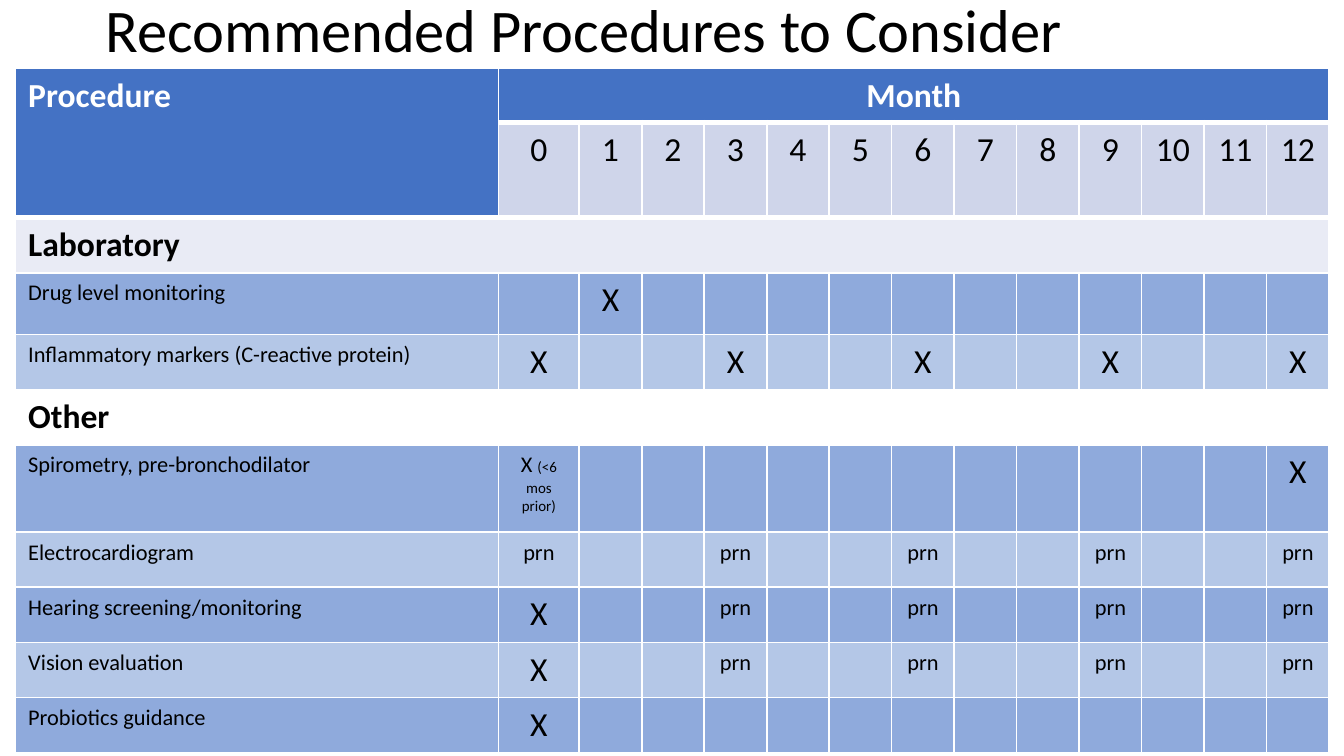
from lxml import etree
from pptx import Presentation
from pptx.dml.color import RGBColor
from pptx.enum.text import MSO_ANCHOR, PP_ALIGN
from pptx.util import Inches, Pt

CENTER, LEFT, MIDDLE = PP_ALIGN.CENTER, PP_ALIGN.LEFT, MSO_ANCHOR.MIDDLE
FONT = "Calibri"
BLACK, WHITE = "000000", "FFFFFF"
HEADER, MONTH_FILL = "4472C4", "CFD5EA"
DARK, LIGHT = "8FAADC", "B4C7E7"
SIZES = {"X": 18, "prn": 12}

# Content: visits map a month to its mark
TITLE = "Recommended Procedures to Consider"
MONTHS = range(13)
QUARTERLY = (3, 6, 9, 12)
PRN = dict.fromkeys(QUARTERLY, "prn")
NOTE = "(<6 mos prior)"

# label, fill, row height, visits (None for a section heading)
ROWS = [
    ("Laboratory", "E9EBF5", 0.41, None),
    ("Drug level monitoring", DARK, 0.46, {1: "X"}),
    ("Inflammatory markers (C-reactive protein)", LIGHT, 0.41,
     dict.fromkeys((0, *QUARTERLY), "X")),
    ("Other", WHITE, 0.41, None),
    ("Spirometry, pre-bronchodilator", DARK, 0.65, {0: NOTE, 12: "X"}),
    ("Electrocardiogram", LIGHT, 0.41, {0: "prn", **PRN}),
    ("Hearing screening/monitoring", DARK, 0.41, {0: "X", **PRN}),
    ("Vision evaluation", LIGHT, 0.41, {0: "X", **PRN}),
    ("Probiotics guidance", DARK, 0.41, {0: "X"}),
]
HEADER_HEIGHTS = [0.4, 0.71]
TABLE_WIDTH, LABEL_WIDTH, BASELINE_WIDTH = 9.78, 3.6, 0.6
MONTH_WIDTH = (TABLE_WIDTH - LABEL_WIDTH - BASELINE_WIDTH) / 12
COL_WIDTHS = [LABEL_WIDTH, BASELINE_WIDTH] + [MONTH_WIDTH] * 12


def rgb(value):
    return RGBColor.from_string(value)


def set_font(font, size, color=BLACK, bold=False):
    font.name, font.size, font.bold = FONT, Pt(size), bold
    font.color.rgb = rgb(color)


def write(cell, text, size=18, color=BLACK, bold=False, align=LEFT):
    p = cell.text_frame.paragraphs[0]
    p.text, p.alignment = text, align
    set_font(p.font, size, color, bold)


def style_cell(cell, fill, bottom=1):
    tc_pr = cell._tc.get_or_add_tcPr()
    ns = tc_pr.nsmap["a"]
    for side, width in (("L", 1), ("R", 1), ("T", 1), ("B", bottom)):
        ln = etree.SubElement(tc_pr, f"{{{ns}}}ln{side}", w=str(Pt(width)))
        solid = etree.SubElement(ln, f"{{{ns}}}solidFill")
        etree.SubElement(solid, f"{{{ns}}}srgbClr", val=WHITE)
    cell.fill.solid()
    cell.fill.fore_color.rgb = rgb(fill)


# Widescreen slide, 16:9
prs = Presentation()
prs.slide_width = Inches(10)
prs.slide_height = prs.slide_width * 9 // 16
s = prs.slides.add_slide(prs.slide_layouts[6])

# Title
tf = s.shapes.add_textbox(Inches(0.69), Inches(0.01),
                          Inches(8.62), Inches(0.47)).text_frame
tf.word_wrap, tf.vertical_anchor = True, MIDDLE
p = tf.paragraphs[0]
p.text, p.line_spacing = TITLE, 0.9
set_font(p.font, 32.4)

# Table grid
heights = HEADER_HEIGHTS + [row[2] for row in ROWS]
table = s.shapes.add_table(len(heights), len(COL_WIDTHS), Inches(0.11), Inches(0.51),
                           Inches(TABLE_WIDTH), Inches(sum(heights))).table
table.first_row = table.horz_banding = False
for column, width in zip(table.columns, COL_WIDTHS):
    column.width = Inches(width)
for row, height in zip(table.rows, heights):
    row.height = Inches(height)
last = len(COL_WIDTHS) - 1

# Header rows
for c in range(last + 1):
    style_cell(table.cell(0, c), HEADER, bottom=3)
    style_cell(table.cell(1, c), MONTH_FILL if c else HEADER, bottom=3)
table.cell(0, 0).merge(table.cell(1, 0))
table.cell(0, 1).merge(table.cell(0, last))
write(table.cell(0, 0), "Procedure", color=WHITE, bold=True)
write(table.cell(0, 1), "Month", color=WHITE, bold=True, align=CENTER)
for month in MONTHS:
    write(table.cell(1, month + 1), str(month), align=CENTER)

# Sections and procedures
for r, (label, fill, _, visits) in enumerate(ROWS, start=len(HEADER_HEIGHTS)):
    for c in range(last + 1):
        style_cell(table.cell(r, c), fill)
    if visits is None:
        table.cell(r, 0).merge(table.cell(r, last))
        write(table.cell(r, 0), label, bold=True)
        continue
    write(table.cell(r, 0), label, size=12)
    for month, mark in visits.items():
        cell = table.cell(r, month + 1)
        if mark == NOTE:
            write(cell, "X ", size=12, align=CENTER)
            run = cell.text_frame.paragraphs[0].add_run()
            run.text = NOTE
            set_font(run.font, 8)
        else:
            write(cell, mark, size=SIZES[mark], align=CENTER)

prs.save("out.pptx")
